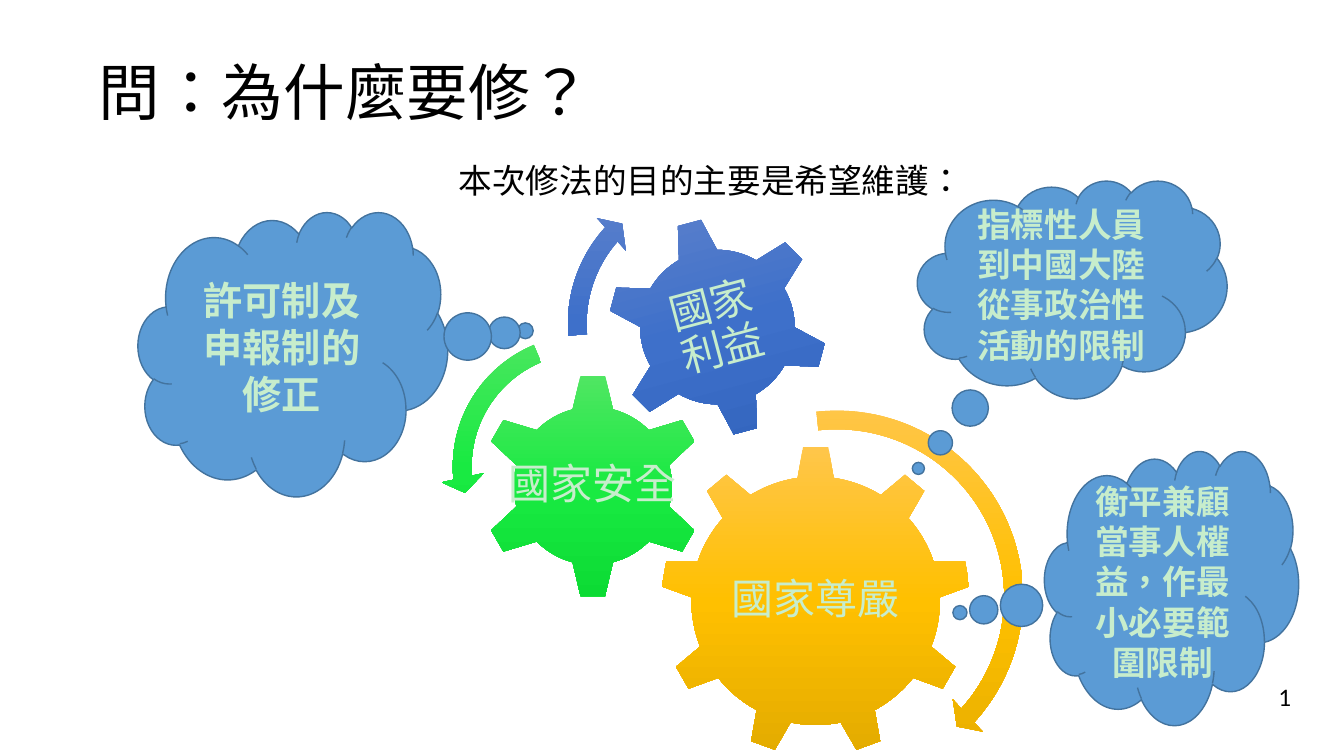
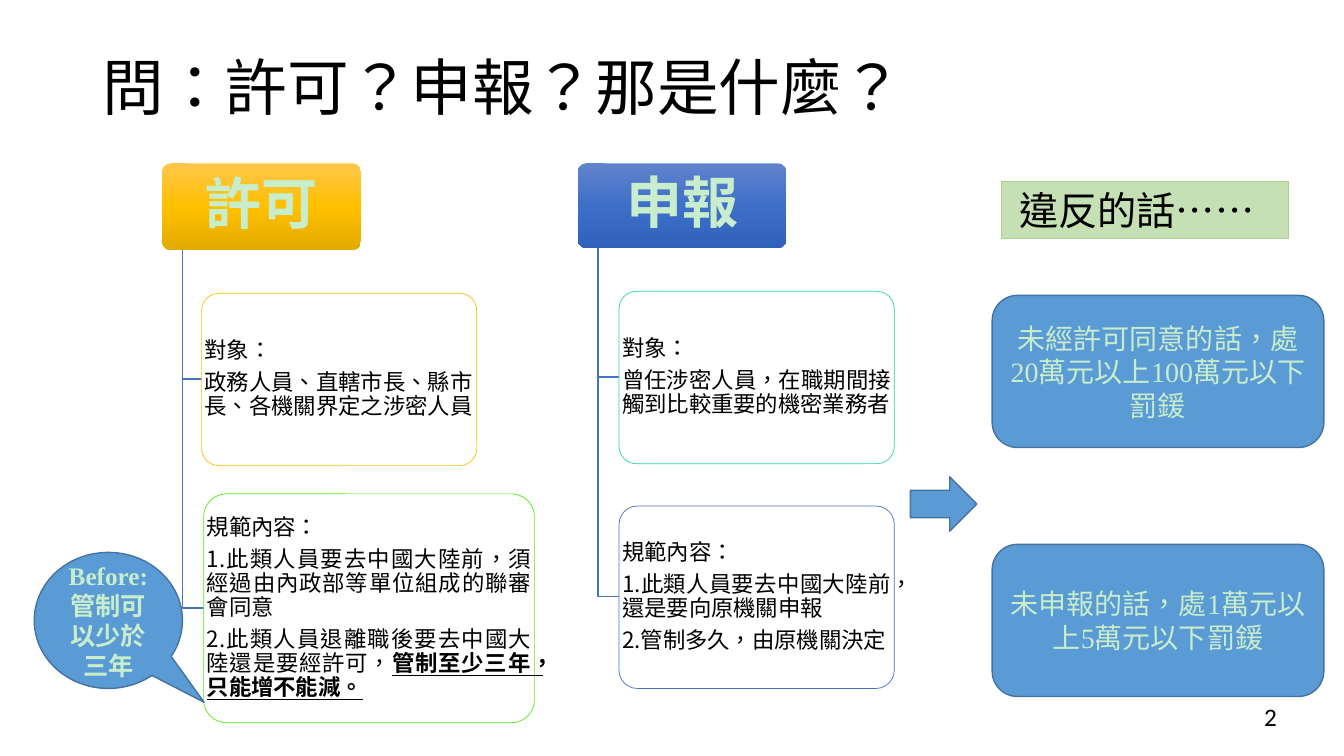
from copy import deepcopy
from pptx import Presentation, util as u
from pptx.dml.color import RGBColor
from pptx.enum import shapes, text
from pptx.oxml.ns import qn
from lxml import etree

PX = 9144
KIND = shapes.MSO_SHAPE
ALIGN = text.PP_ALIGN
HAN = "Noto Sans CJK SC"
ROMAN = "Times New Roman"
BLACK = RGBColor(0x00, 0x00, 0x00)
WHITE = RGBColor(0xFF, 0xFF, 0xFF)
MINT = RGBColor(0xC7, 0xED, 0xCC)
BLUE = RGBColor(0x5B, 0x9B, 0xD5)
NAVY = RGBColor(0x43, 0x73, 0x9E)
ROYAL = RGBColor(0x44, 0x72, 0xC4)
AMBER = RGBColor(0xFF, 0xC0, 0x00)
LIME = RGBColor(0x53, 0xEB, 0x17)
TEAL = RGBColor(0x2E, 0xD7, 0xA1)
LEAF = RGBColor(0xC5, 0xE0, 0xB4)
MOSS = RGBColor(0xA9, 0xD1, 0x8E)
GOLD = (RGBColor(0xFF, 0xC6, 0x4B), AMBER, RGBColor(0xE3, 0xAB, 0x00))
GREEN = (RGBColor(0x51, 0xE6, 0x63), RGBColor(0x19, 0xEA, 0x42), RGBColor(0x0C, 0xDB, 0x34))
COBALT = (RGBColor(0x61, 0x83, 0xCB), RGBColor(0x3E, 0x70, 0xCA), RGBColor(0x30, 0x62, 0xBB))


def draw(slide, kind, box, fill, edge=None, width=1, adj=(), turn=0):
    shape = slide.shapes.add_shape(kind, *[n * PX for n in box])
    shape.shadow.inherit = False
    shape.rotation = turn
    for i, value in enumerate(adj):
        shape.adjustments[i] = value
    if isinstance(fill, RGBColor):
        shape.fill.solid()
        shape.fill.fore_color.rgb = fill
    else:
        shape.fill.gradient()
        shape.fill.gradient_angle = 270
        stops = shape._element.spPr.find(".//" + qn("a:gsLst"))
        stops.insert(1, deepcopy(stops[0]))
        for i, stop in enumerate(shape.fill.gradient_stops):
            stop.position = i / 2
            stop.color.rgb = fill[i]
    if edge is None:
        shape.line.fill.background()
    else:
        shape.line.color.rgb = edge
        shape.line.width = u.Pt(width)
    return shape


def write(shape, paras, size, color=BLACK, bold=False, face=HAN, align=ALIGN.LEFT,
          lead=1, after=0, pad=(10, 5), mark=None):
    frame = shape.text_frame
    frame.word_wrap = True
    frame.vertical_anchor = text.MSO_ANCHOR.MIDDLE
    frame.margin_left = frame.margin_right = pad[0] * PX
    frame.margin_top = frame.margin_bottom = pad[1] * PX
    for i, runs in enumerate(paras):
        para = frame.add_paragraph() if i else frame.paragraphs[0]
        para.alignment = align
        para.line_spacing = lead
        para.space_after = u.Pt(after)
        for words in runs:
            run = para.add_run()
            run.text = words
            font = run.font
            font.name = face
            font.size = u.Pt(size)
            font.color.rgb = color
            font.bold = bold or words == mark
            font.underline = words == mark
            props = run._r.get_or_add_rPr()
            props.set("lang", "zh-TW")
            east = etree.Element(qn("a:ea"), typeface=HAN)
            props.find(qn("a:latin")).addnext(east)


deck = Presentation()
deck.slide_width = 1333 * PX
deck.slide_height = 750 * PX

pages = []
for title, spot, mark in [
    ("問：為什麼要修？", (88, 22), (1258, 671)),
    ("問：許可？申報？那是什麼？", (92, 17), (1244, 691)),
]:
    page = deck.slides.add_slide(deck.slide_layouts[6])
    pages.append(page)
    for words, box, size, face, lead in [
        (title, (*spot, 1150, 145), 44, HAN, 0.9),
        (str(len(pages)), (*mark, 33, 40), 18, "Calibri", 1),
    ]:
        label = page.shapes.add_textbox(*[n * PX for n in box])
        write(label, [[words]], size, face=face, lead=lead)

why, what = pages

for kind, box, fill, turn, words, area in [
    (KIND.GEAR_9, (655, 442, 308, 308), GOLD, 0, "國家尊嚴", (655, 442, 308, 308)),
    (KIND.GEAR_6, (476, 370, 224, 224), GREEN, 0, "國家安全", (476, 370, 224, 224)),
    (KIND.GEAR_6, (602, 215, 219, 219), COBALT, 345, "國家利益", (650, 264, 123, 123)),
]:
    draw(why, kind, box, fill, turn=turn)
    label = why.shapes.add_textbox(*[n * PX for n in area])
    label.rotation = turn
    write(label, [[words]], 30, MINT, align=ALIGN.CENTER, lead=0.9, pad=(4, 4))

for kind, box, fill, adj in [
    (KIND.CIRCULAR_ARROW, (633, 395, 394, 394), GOLD, (0.047, 2.99, 25.345, 158.224, 0.055)),
    (KIND.LEFT_CIRCULAR_ARROW, (437, 320, 286, 286), GREEN, (0.065, 4.3, 104.891, 148.378, 0.075)),
    (KIND.CIRCULAR_ARROW, (551, 167, 308, 308), COBALT, (0.06, 3.941, 133.138, 105.082, 0.07)),
]:
    draw(why, kind, box, fill, adj=adj)

intro = why.shapes.add_textbox(445 * PX, 154 * PX, 525 * PX, 50 * PX)
write(intro, [["本次修法的目的主要是希望維護："]], 24)

for box, adj, size, words in [
    ((910, 179, 307, 216), (-0.497, 0.823), 24, "指標性人員到中國大陸從事政治性活動的限制"),
    ((137, 210, 307, 282), (0.751, -0.081), 28, "許可制及申報制的修正"),
    ((1036, 447, 252, 272), (-0.833, 0.091), 24, "衡平兼顧當事人權益，作最小必要範圍限制"),
]:
    cloud = draw(why, KIND.CLOUD_CALLOUT, box, BLUE, NAVY, adj=adj)
    write(cloud, [[words]], size, MINT, True, align=ALIGN.CENTER)

STRONG = "管制至少三年，只能增不能減。"
for head, box, fill, cards in [
    ("許可", (161, 162, 197, 86), GOLD, [
        ((200, 291, 273, 171), AMBER, ALIGN.LEFT, [
            ["對象："],
            ["政務人員、直轄市長、縣市長、各機關界定之涉密人員"],
        ]),
        ((202, 490, 328, 227), LIME, ALIGN.JUSTIFY, [
            ["規範內容："],
            ["1.此類人員要去中國大陸前，須經過由內政部等單位組成的聯審會同意"],
            ["2.此類人員退離職後要去中國大陸還是要經許可，", STRONG],
        ]),
    ]),
    ("申報", (573, 162, 207, 84), COBALT, [
        ((614, 289, 273, 171), TEAL, ALIGN.JUSTIFY, [
            ["對象："],
            ["曾任涉密人員，在職期間接觸到比較重要的機密業務者"],
        ]),
        ((614, 502, 273, 181), ROYAL, ALIGN.JUSTIFY, [
            ["規範內容："],
            ["1.此類人員要去中國大陸前，還是要向原機關申報"],
            ["2.管制多久，由原機關決定"],
        ]),
    ]),
]:
    banner = draw(what, KIND.ROUNDED_RECTANGLE, box, fill, adj=(0.1,))
    write(banner, [[head]], 40, MINT, True, align=ALIGN.CENTER, lead=0.9, pad=(8, 6))
    stem, base = box[0] + 20, box[1] + box[3]
    for area, edge, align, paras in cards:
        left, top, wide, high = area
        mid = top + high // 2
        track = what.shapes.build_freeform(stem, base, scale=PX)
        track.add_line_segments([(stem, mid), (left, mid)], close=False)
        elbow = track.convert_to_shape()
        elbow.shadow.inherit = False
        elbow.fill.background()
        elbow.line.color.rgb = ROYAL
        elbow.line.width = u.Pt(1)
        draw(what, KIND.ROUNDED_RECTANGLE, area, WHITE, edge, 0.5, (0.1,))
        label = what.shapes.add_textbox(*[n * PX for n in area])
        write(label, paras, 16, align=align, lead=0.9, after=5.6, pad=(3, 2), mark=STRONG)

bubble = draw(what, KIND.OVAL_CALLOUT, (34, 548, 147, 135), BLUE, NAVY, adj=(0.646, 0.602))
write(bubble, [["Before: 管制可以少於三年"]], 18, MINT, True, ROMAN, ALIGN.CENTER)

breach = draw(what, KIND.RECTANGLE, (993, 180, 285, 57), LEAF, MOSS, 0.75)
write(breach, [["違反的話……"]], 28, pad=(18, 5))

draw(what, KIND.RIGHT_ARROW, (903, 473, 66, 54), BLUE, NAVY)

for top, words in [
    (293, "未經許可同意的話，處20萬元以上100萬元以下罰鍰"),
    (540, "未申報的話，處1萬元以上5萬元以下罰鍰"),
]:
    fine = draw(what, KIND.ROUNDED_RECTANGLE, (984, top, 329, 151), BLUE, NAVY)
    write(fine, [[words]], 20, MINT, face=ROMAN, align=ALIGN.CENTER)

deck.save("out.pptx")
